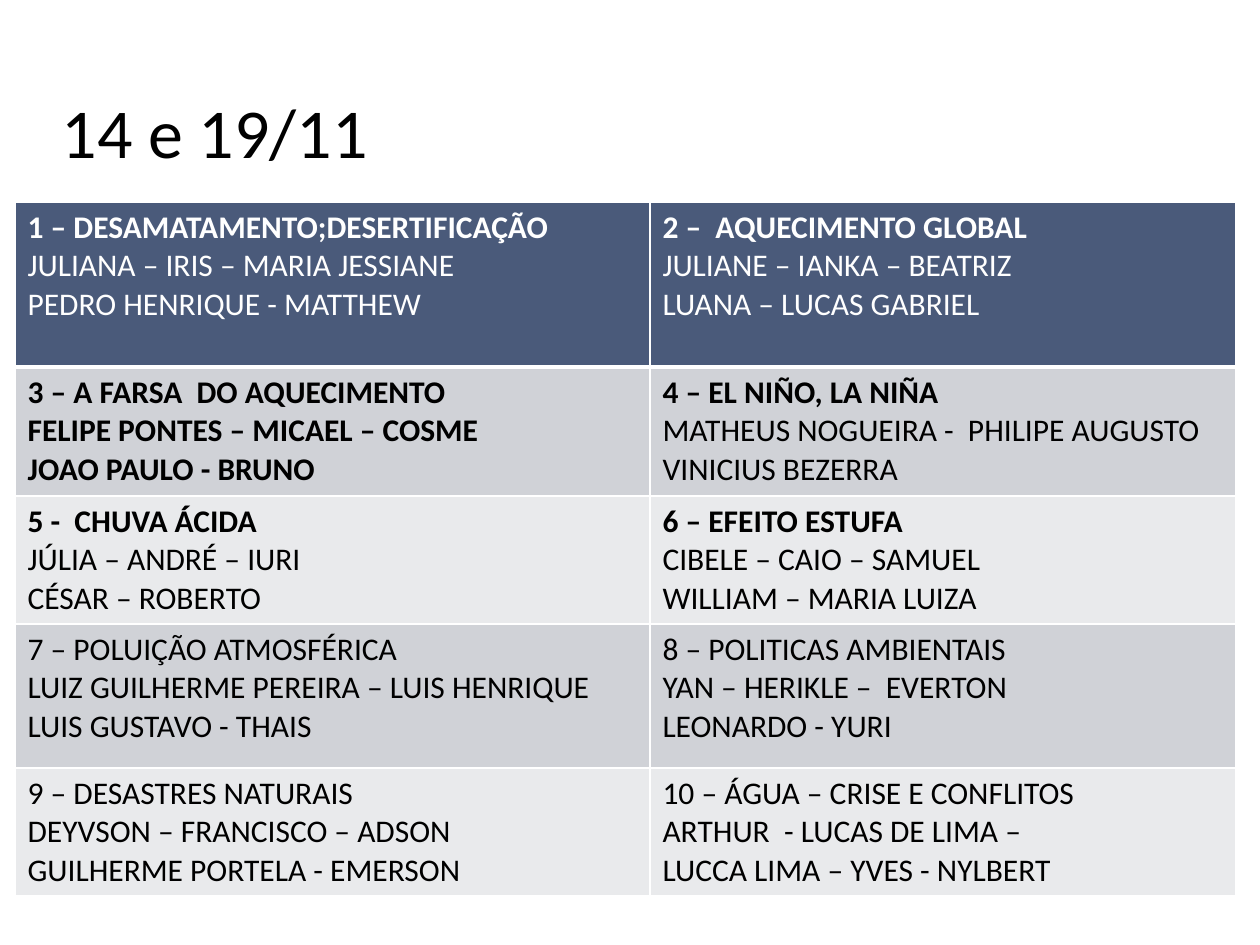
from lxml import etree
from pptx import Presentation
from pptx import util as u
from pptx.dml.color import RGBColor
from pptx.enum import text
from pptx.oxml.ns import qn

FONT = "Calibri"
WHITE, BLACK = "FFFFFF", "000000"
HEADER, BAND_DARK, BAND_LIGHT = "4A5A7A", "D0D2D7", "E9EAEC"
COL_WIDTHS = [635, 586]
ROW_HEIGHTS = [165, 129, 128, 144, 128]

# Each group: its lines, and how many of them are bold
GROUPS = [
    [(["1 – DESAMATAMENTO;DESERTIFICAÇÃO", "JULIANA – IRIS – MARIA JESSIANE",
       "PEDRO HENRIQUE - MATTHEW"], 1),
     (["2 –  AQUECIMENTO GLOBAL", "JULIANE – IANKA – BEATRIZ",
       "LUANA – LUCAS GABRIEL"], 1)],
    [(["3 – A FARSA  DO AQUECIMENTO", "FELIPE PONTES – MICAEL – COSME",
       "JOAO PAULO - BRUNO"], 3),
     (["4 – EL NIÑO, LA NIÑA", "MATHEUS NOGUEIRA -  PHILIPE AUGUSTO",
       "VINICIUS BEZERRA"], 1)],
    [(["5 -  CHUVA ÁCIDA", "JÚLIA – ANDRÉ – IURI", "CÉSAR – ROBERTO"], 1),
     (["6 – EFEITO ESTUFA", "CIBELE – CAIO – SAMUEL",
       "WILLIAM – MARIA LUIZA"], 1)],
    [(["7 – POLUIÇÃO ATMOSFÉRICA", "LUIZ GUILHERME PEREIRA – LUIS HENRIQUE",
       "LUIS GUSTAVO - THAIS"], 0),
     (["8 – POLITICAS AMBIENTAIS", "YAN – HERIKLE –  EVERTON",
       "LEONARDO - YURI"], 0)],
    [(["9 – DESASTRES NATURAIS", "DEYVSON – FRANCISCO – ADSON",
       "GUILHERME PORTELA - EMERSON"], 0),
     (["10 – ÁGUA – CRISE E CONFLITOS", "ARTHUR  - LUCAS DE LIMA –",
       "LUCCA LIMA – YVES - NYLBERT"], 0)],
]


def px(n):
    return u.Emu(round(n * 914400 / 126))


def color(hex_string):
    return RGBColor.from_string(hex_string)


def write(tf, lines, size=18, fill=BLACK, bold_lines=0):
    for i, line in enumerate(lines):
        p = tf.paragraphs[0] if i == 0 else tf.add_paragraph()
        p.alignment = text.PP_ALIGN.LEFT
        r = p.add_run()
        r.text = line
        r.font.name = FONT
        r.font.size = u.Pt(size)
        r.font.bold = i < bold_lines
        r.font.color.rgb = color(fill)


def set_borders(cell, top, bottom):
    """Draw white cell borders; widths in points, sides are 1 pt."""
    tcPr = cell._tc.get_or_add_tcPr()
    sides = [("a:lnL", 1), ("a:lnR", 1), ("a:lnT", top), ("a:lnB", bottom)]
    for i, (tag, width) in enumerate(sides):
        ln = etree.Element(qn(tag), w=str(u.Pt(width)))
        fill = etree.SubElement(ln, qn("a:solidFill"))
        etree.SubElement(fill, qn("a:srgbClr"), val=WHITE)
        tcPr.insert(i, ln)


def add_title(s, x, y, w, h):
    title = s.shapes.title
    title.left, title.top, title.width, title.height = map(px, (x, y, w, h))
    tf = title.text_frame
    tf.vertical_anchor = text.MSO_ANCHOR.BOTTOM
    write(tf, ["14 e 19/11"], size=40)


def add_groups_table(s, x, y):
    frame = s.shapes.add_table(len(ROW_HEIGHTS), len(COL_WIDTHS), px(x), px(y),
                               px(sum(COL_WIDTHS)), px(sum(ROW_HEIGHTS)))
    table = frame.table
    for column, width in zip(table.columns, COL_WIDTHS):
        column.width = px(width)
    for i, (row, height) in enumerate(zip(table.rows, ROW_HEIGHTS)):
        row.height = px(height)
        band = HEADER if i == 0 else BAND_DARK if i % 2 else BAND_LIGHT
        for cell, (lines, bold_lines) in zip(row.cells, GROUPS[i]):
            cell.fill.solid()
            cell.fill.fore_color.rgb = color(band)
            set_borders(cell, top=3 if i == 1 else 1, bottom=3 if i == 0 else 1)
            write(cell.text_frame, lines, bold_lines=bold_lines,
                  fill=WHITE if i == 0 else BLACK)


def main():
    prs = Presentation()
    prs.slide_width, prs.slide_height = px(1260), px(945)
    s = prs.slides.add_slide(prs.slide_layouts[5])
    add_groups_table(s, 15, 202)
    add_title(s, 49, 32, 1058, 147)
    prs.save("out.pptx")


if __name__ == "__main__":
    main()
